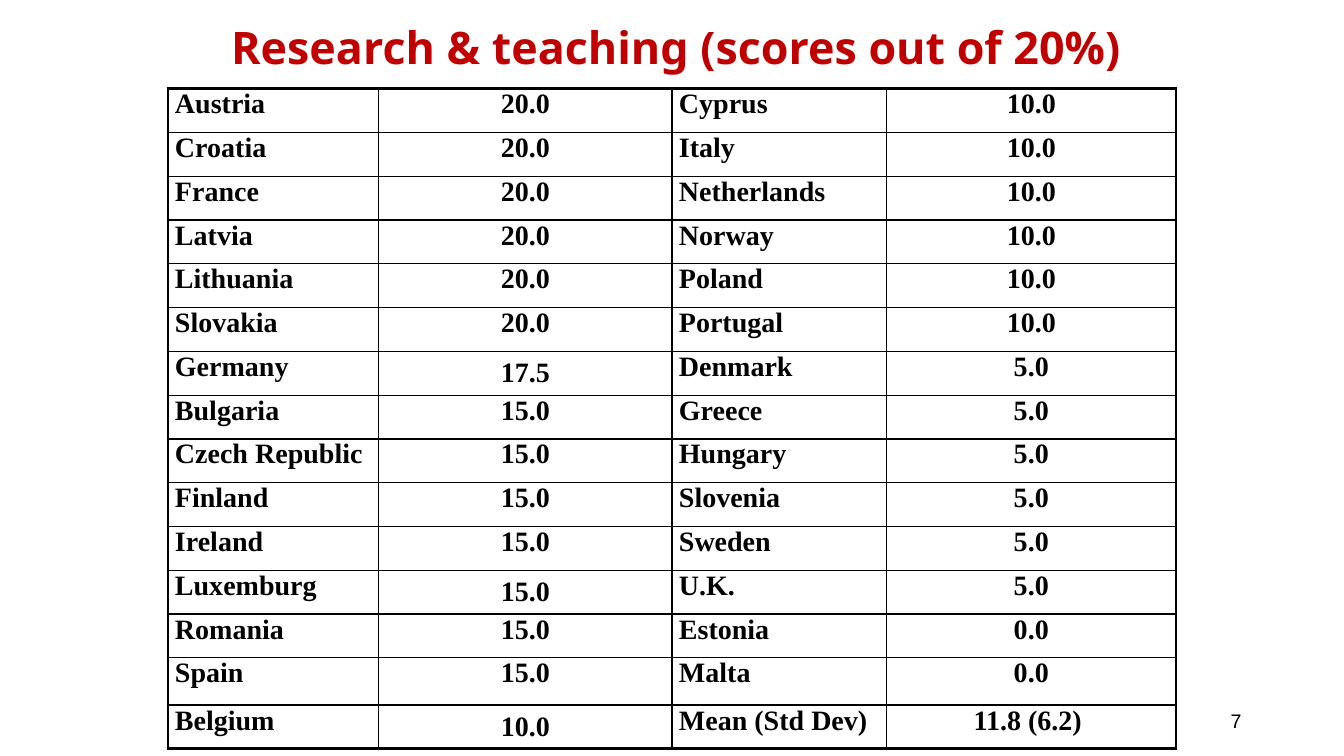
from lxml import etree
from pptx import Presentation
from pptx.dml.color import RGBColor
from pptx.enum.text import MSO_ANCHOR, PP_ALIGN
from pptx.oxml.ns import qn
from pptx.util import Pt

LEFT, MID, RIGHT = PP_ALIGN.LEFT, PP_ALIGN.CENTER, PP_ALIGN.RIGHT
TOP, CENTER = MSO_ANCHOR.TOP, MSO_ANCHOR.MIDDLE
RED = RGBColor(0xC0, 0x00, 0x00)
BLACK = RGBColor(0x00, 0x00, 0x00)
THIN, THICK = 1, 2.25

SCORES = [
    ("Austria", "20.0", "Cyprus", "10.0"),
    ("Croatia", "20.0", "Italy", "10.0"),
    ("France", "20.0", "Netherlands", "10.0"),
    ("Latvia", "20.0", "Norway", "10.0"),
    ("Lithuania", "20.0", "Poland", "10.0"),
    ("Slovakia", "20.0", "Portugal", "10.0"),
    ("Germany", "17.5", "Denmark", "5.0"),
    ("Bulgaria", "15.0", "Greece", "5.0"),
    ("Czech Republic", "15.0", "Hungary", "5.0"),
    ("Finland", "15.0", "Slovenia", "5.0"),
    ("Ireland", "15.0", "Sweden", "5.0"),
    ("Luxemburg", "15.0", "U.K.", "5.0"),
    ("Romania", "15.0", "Estonia", "0.0"),
    ("Spain", "15.0", "Malta", "0.0"),
    ("Belgium", "10.0", "Mean (Std Dev)", "11.8 (6.2) "),
]
WIDTHS = (150.5, 209.5, 153.4, 206.6)
CENTERED = {"Germany", "Luxemburg", "Belgium"}
TALL = "Spain"


def style(para, font, size, color, bold, align):
    para.alignment = align
    para.font.name = font
    para.font.size = Pt(size)
    para.font.color.rgb = color
    para.font.bold = bold


def add_text(slide, box, text, font, size, color, bold, align, anchor, inset):
    frame = slide.shapes.add_textbox(*map(Pt, box)).text_frame
    frame.word_wrap = True
    frame.vertical_anchor = anchor
    frame.margin_left = frame.margin_right = Pt(inset[0])
    frame.margin_top = frame.margin_bottom = Pt(inset[1])
    frame.text = text
    style(frame.paragraphs[0], font, size, color, bold, align)


def add_title(slide, box):
    add_text(slide, box, "Research & teaching (scores out of 20%)",
             "Noto Sans", 32, RED, True, MID, TOP, (14.4, 14.4))


def add_number(slide, box):
    add_text(slide, box, "7", "Arial", 14, BLACK, False, RIGHT, CENTER, (7.2, 3.6))


def set_edges(cell, widths):
    props = cell._tc.get_or_add_tcPr()
    for place, (side, width) in enumerate(widths.items()):
        line = etree.Element(qn("a:ln" + side), w=str(Pt(width)))
        fill = etree.SubElement(line, qn("a:solidFill"))
        etree.SubElement(fill, qn("a:srgbClr"), val=str(BLACK))
        props.insert(place, line)


def add_scores(slide, box):
    rows, cols = len(SCORES), len(WIDTHS)
    table = slide.shapes.add_table(rows, cols, *map(Pt, box)).table
    table.first_row = table.horz_banding = False
    for col, width in zip(table.columns, WIDTHS):
        col.width = Pt(width)
    extra = 2.5
    height = (box[3] - extra) / rows
    for r, values in enumerate(SCORES):
        table.rows[r].height = Pt(height + extra * (values[0] == TALL))
        for c, value in enumerate(values):
            cell = table.cell(r, c)
            cell.margin_left = cell.margin_right = Pt(5)
            cell.margin_top = cell.margin_bottom = 0
            middle = c == 1 and values[0] in CENTERED
            cell.vertical_anchor = CENTER if middle else TOP
            cell.text = value
            style(cell.text_frame.paragraphs[0], "Times New Roman", 20, BLACK,
                  True, MID if c % 2 else LEFT)
            cell.fill.background()
            set_edges(cell, {
                "L": THICK if c == 0 else THIN,
                "R": THICK if c == cols - 1 else THIN,
                "T": THICK if r == 0 else THIN,
                "B": THICK if r == rows - 1 else THIN,
            })


def main():
    deck = Presentation()
    deck.slide_width, deck.slide_height = Pt(960), Pt(540)
    slide = deck.slides.add_slide(deck.slide_layouts[6])
    add_title(slide, (106, 0, 754, 67.7))
    add_scores(slide, (120, 63.4, sum(WIDTHS), 471.6))
    add_number(slide, (678, 500.5, 216, 28.8))
    deck.save("out.pptx")


if __name__ == "__main__":
    main()
